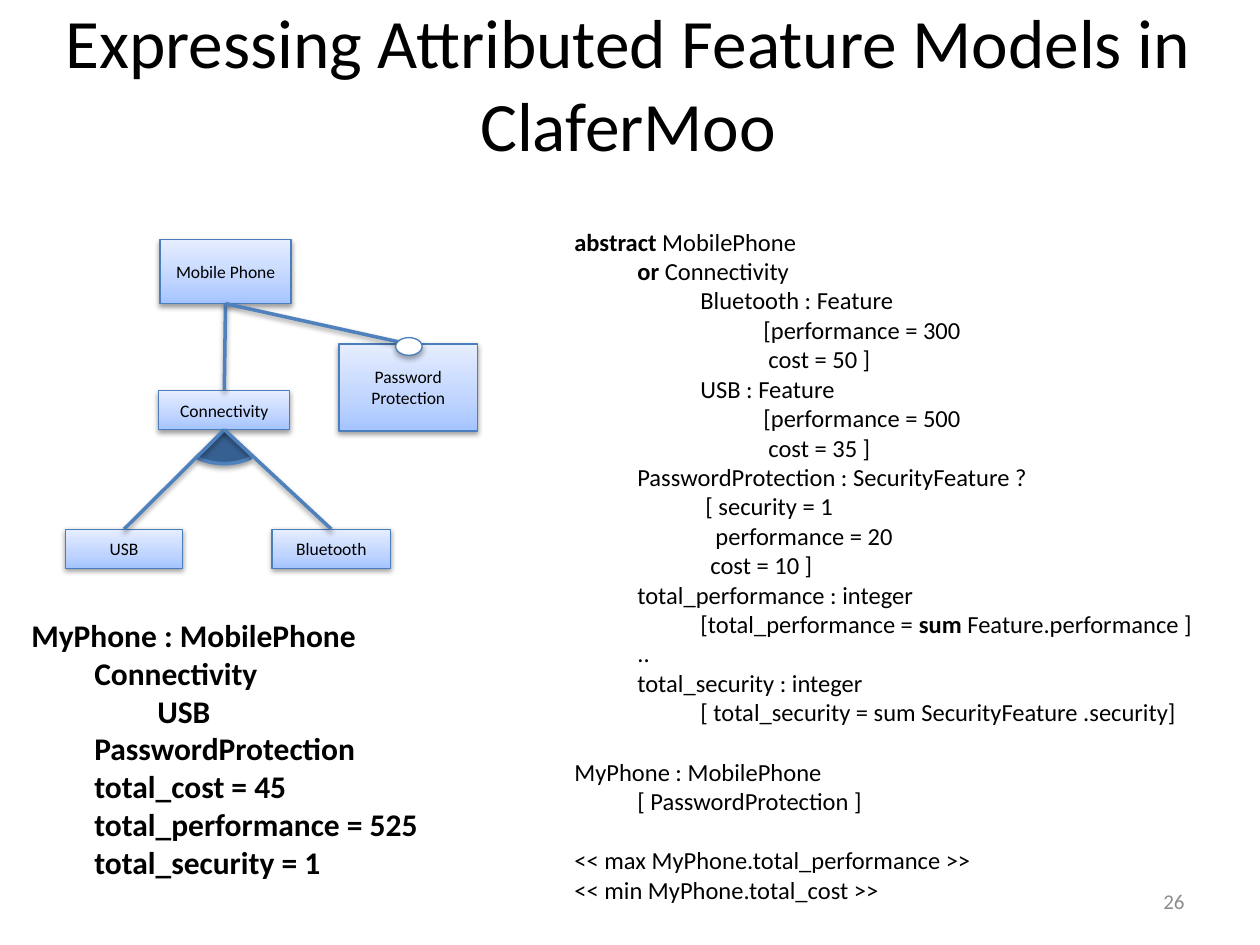
from copy import deepcopy

from lxml.etree import SubElement
from pptx import Presentation
from pptx.dml.color import RGBColor as Rgb
from pptx.enum.shapes import MSO_CONNECTOR as Link, MSO_SHAPE as Kind
from pptx.enum.text import MSO_ANCHOR as Anchor, MSO_AUTO_SIZE as Fit, PP_ALIGN as Align
from pptx.oxml.ns import qn
from pptx.util import Inches, Pt

HUES = {
    "ink": "000000", "gray": "8C8C8C", "white": "FFFFFF",
    "edge": "4B7EBC", "line": "4F81BD", "arc": "376092",
    "low": "A4C4FF", "mid": "BFD4FF", "high": "E6EEFF",
}
TAB = 0.5
SPACE = 0.04

CODE = [
    (0, "*abstract* MobilePhone"),
    (1, "*or* Connectivity"),
    (2, "Bluetooth : Feature"),
    (3, "[performance = 300"),
    (3, "cost = 50 ]", 1),
    (2, "USB : Feature"),
    (3, "[performance = 500"),
    (3, "cost = 35 ]", 1),
    (1, "PasswordProtection : SecurityFeature ?"),
    (2, "[ security = 1", 1),
    (2, "performance = 20", 3),
    (2, "cost = 10 ]", 2),
    (1, "total_performance : integer"),
    (2, "[total_performance = *sum* Feature.performance ]"),
    (1, ".."),
    (1, "total_security : integer"),
    (2, "[ total_security = sum SecurityFeature .security]"),
    (0, "MyPhone : MobilePhone", 0, 17),
    (1, "[ PasswordProtection ]"),
    (0, "<< max MyPhone.total_performance >>", 0, 17),
    (0, "<< min MyPhone.total_cost >>"),
]
PHONE = [
    (0, "*MyPhone : MobilePhone*"),
    (1, "*Connectivity*"),
    (2, "*USB*"),
    (1, "*PasswordProtection*"),
    (1, "*total_cost = 45*"),
    (1, "*total_performance = 525*"),
    (1, "*total_security = 1*"),
]


def hue(name):
    return Rgb.from_string(HUES[name])


def write(frame, rows, size=14, color="ink", align=Align.LEFT, anchor=Anchor.TOP):
    frame.word_wrap = True
    frame.auto_size = Fit.NONE
    frame.vertical_anchor = anchor
    for n, (level, text, *gaps) in enumerate(rows):
        para = frame.paragraphs[0] if n == 0 else frame.add_paragraph()
        para.alignment = align
        lead, above = (gaps + [0, 0])[:2]
        if level or lead:
            inset = Inches(level * TAB + lead * SPACE)
            para._p.get_or_add_pPr().set("marL", str(inset))
        if above:
            para.space_before = Pt(above)
        for i, part in enumerate(text.split("*")):
            if part:
                run = para.add_run()
                run.text = part
                font = run.font
                font.name, font.size, font.bold = "Calibri", Pt(size), i % 2 == 1
                font.color.rgb = hue(color)


def shade(item, alpha=38):
    props = item._element.spPr
    list_ = props.find(qn("a:effectLst"))
    if list_ is None:
        list_ = SubElement(props, qn("a:effectLst"))
    cast = SubElement(list_, qn("a:outerShdw"), blurRad=str(Pt(3.1)),
                      dist=str(Pt(1.6)), dir="5400000", rotWithShape="0")
    tone = SubElement(cast, qn("a:srgbClr"), val=HUES["ink"])
    SubElement(tone, qn("a:alpha"), val=str(alpha * 1000))


def blend(shape):
    shape.fill.gradient()
    shape.fill.gradient_angle = 90
    stops = shape._element.spPr.find(".//" + qn("a:gsLst"))
    stops.insert(1, deepcopy(stops[0]))
    grades = [(0, "low"), (0.35, "mid"), (1, "high")]
    for stop, (spot, name) in zip(shape.fill.gradient_stops, grades):
        stop.position = spot
        stop.color.rgb = hue(name)


def form(shapes, kind, box, fill=None, line="edge", width=0.75, alpha=38):
    shape = shapes.add_shape(kind, *map(Inches, box))
    shape.shadow.inherit = False
    if fill:
        shape.fill.solid()
        shape.fill.fore_color.rgb = hue(fill)
    else:
        blend(shape)
    shape.line.color.rgb = hue(line)
    shape.line.width = Pt(width)
    shade(shape, alpha)
    return shape


def join(shapes, upper, lower):
    link = shapes.add_connector(Link.STRAIGHT, 0, 0, 0, 0)
    link.begin_connect(upper, 2)
    link.end_connect(lower, 0)
    link.line.color.rgb = hue("line")
    link.line.width = Pt(2)
    shade(link)


def head(slide, box, text):
    title = slide.shapes.title
    title.left, title.top, title.width, title.height = map(Inches, box)
    write(title.text_frame, [(0, text)], size=39.6,
          align=Align.CENTER, anchor=Anchor.MIDDLE)


def block(slide, box, rows, **style):
    area = slide.shapes.add_textbox(*map(Inches, box))
    write(area.text_frame, rows, **style)


def tree(slide, x, y):
    shapes = slide.shapes.add_group_shape().shapes
    arc = form(shapes, Kind.ARC, (x + 0.88, y + 1.24, 0.76, 0.54),
               fill="arc", line="line", width=2)
    arc.adjustments[0], arc.adjustments[1] = 27.33, 80.98
    nodes = {
        "Mobile Phone": (0.75, 0, 1.04, 0.51),
        "Connectivity": (0.74, 1.2, 1.04, 0.31),
        "Password\nProtection": (2.17, 0.83, 1.1, 0.69),
        "Bluetooth": (1.64, 2.3, 0.94, 0.31),
        "USB": (0, 2.3, 0.93, 0.31),
    }
    made = []
    for name, (dx, dy, w, h) in nodes.items():
        node = form(shapes, Kind.RECTANGLE, (x + dx, y + dy, w, h))
        write(node.text_frame, [(0, row) for row in name.split("\n")],
              size=10, align=Align.CENTER, anchor=Anchor.MIDDLE)
        made.append(node)
    phone, conn, lock, blue, usb = made
    for upper, lower in [(phone, conn), (phone, lock), (conn, usb), (conn, blue)]:
        join(shapes, upper, lower)
    form(shapes, Kind.OVAL, (x + 2.62, y + 0.78, 0.21, 0.14), fill="white", alpha=35)


def main():
    deck = Presentation()
    deck.slide_width, deck.slide_height = Inches(10), Inches(7.5)
    slide = deck.slides.add_slide(deck.slide_layouts[5])
    head(slide, (0.15, 0.3, 9.67, 0.71),
         "Expressing Attributed Feature Models in ClaferMoo")
    block(slide, (4.46, 1.75, 6.18, 6.46), CODE)
    tree(slide, 0.52, 1.9)
    block(slide, (0.15, 4.84, 5, 2.22), PHONE, size=18)
    block(slide, (7.17, 6.95, 2.33, 0.4), [(0, "26")], size=12, color="gray",
          align=Align.RIGHT, anchor=Anchor.MIDDLE)
    deck.save("out.pptx")


if __name__ == "__main__":
    main()
